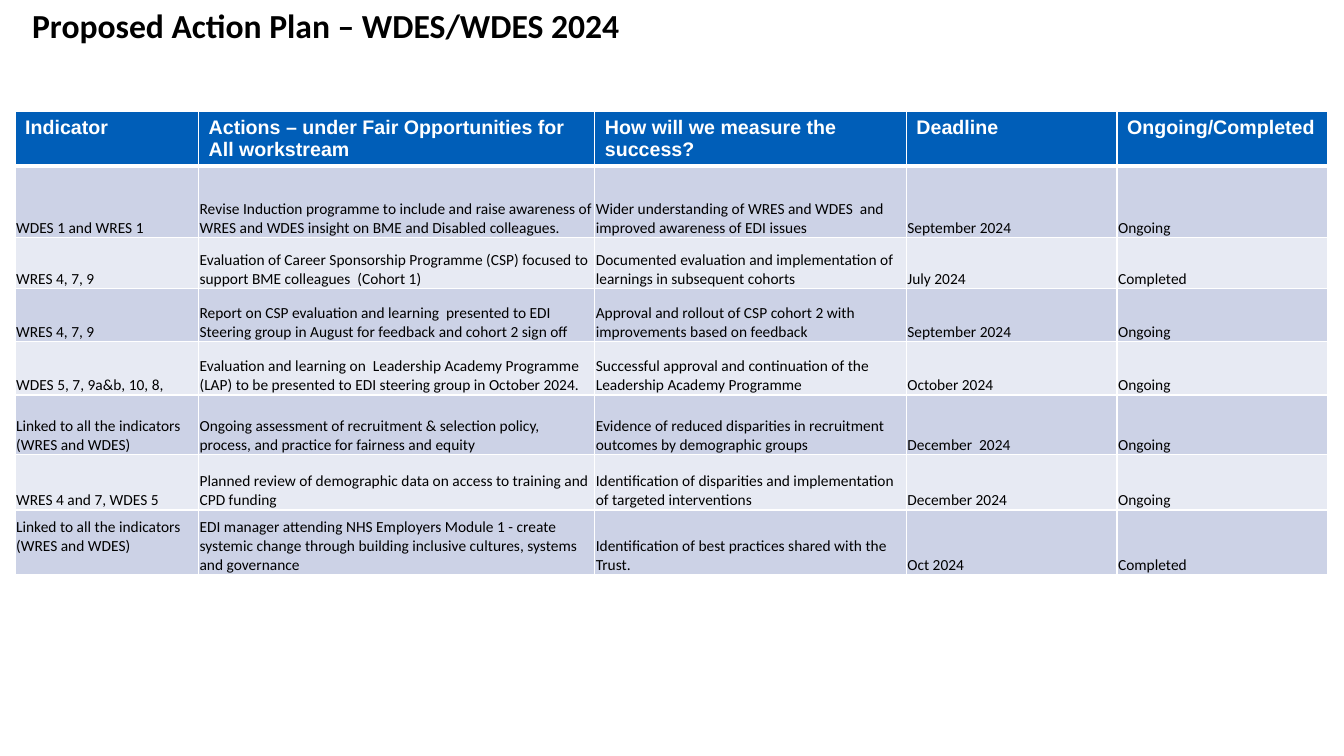
from pptx import Presentation
from pptx import util as u
from pptx.dml.color import RGBColor
from pptx.enum import text
from pptx.oxml.ns import qn
from lxml import etree

COLORS = {"white": "FFFFFF", "black": "000000", "header": "005EB8",
          "odd": "CCD2E6", "even": "E7EAF3"}
COLUMN_WIDTHS = [1.82, 3.93, 3.09, 2.09, 2.09]
ROW_HEIGHTS = [0.54, 0.71, 0.5, 0.53, 0.53, 0.59, 0.55, 0.64]
ACTIONS = [
    ["Indicator", "Actions – under Fair Opportunities for All workstream",
     "How will we measure the success?", "Deadline", "Ongoing/Completed"],
    ["WDES 1 and WRES 1",
     "Revise Induction programme to include and raise awareness of WRES and WDES insight on BME and Disabled colleagues.",
     "Wider understanding of WRES and WDES  and improved awareness of EDI issues",
     "September 2024", "Ongoing"],
    ["WRES 4, 7, 9",
     "Evaluation of Career Sponsorship Programme (CSP) focused to support BME colleagues  (Cohort 1)",
     "Documented evaluation and implementation of learnings in subsequent cohorts",
     "July 2024", "Completed"],
    ["WRES 4, 7, 9",
     "Report on CSP evaluation and learning  presented to EDI Steering group in August for feedback and cohort 2 sign off",
     "Approval and rollout of CSP cohort 2 with improvements based on feedback",
     "September 2024", "Ongoing"],
    ["WDES 5, 7, 9a&b, 10, 8,",
     "Evaluation and learning on  Leadership Academy Programme (LAP) to be presented to EDI steering group in October 2024.",
     "Successful approval and continuation of the Leadership Academy Programme",
     "October 2024", "Ongoing"],
    ["Linked to all the indicators (WRES and WDES)",
     "Ongoing assessment of recruitment & selection policy, process, and practice for fairness and equity",
     "Evidence of reduced disparities in recruitment outcomes by demographic groups",
     "December  2024", "Ongoing"],
    ["WRES 4 and 7, WDES 5",
     "Planned review of demographic data on access to training and CPD funding",
     "Identification of disparities and implementation of targeted interventions",
     "December 2024", "Ongoing"],
    ["Linked to all the indicators (WRES and WDES)",
     "EDI manager attending NHS Employers Module 1 - create systemic change through building inclusive cultures, systems and governance",
     "Identification of best practices shared with the Trust.",
     "Oct 2024", "Completed"],
]


class ActionPlanSlide:
    def __init__(self, prs):
        self.s = prs.slides.add_slide(prs.slide_layouts[6])

    def color(self, name):
        return RGBColor.from_string(COLORS[name])

    def words(self, tf, content, font, size, color, bold):
        p = tf.paragraphs[0]
        p.text = content
        for r in p.runs:
            r.font.name = font
            r.font.size = u.Pt(size)
            r.font.bold = bold
            r.font.color.rgb = self.color(color)

    def title(self, content, left, top, width, height):
        sp = self.s.shapes.add_textbox(*map(u.Inches, (left, top, width, height)))
        tf = sp.text_frame
        tf.word_wrap = True
        tf.auto_size = text.MSO_AUTO_SIZE.SHAPE_TO_FIT_TEXT
        self.words(tf, content, "Calibri", 24, "black", True)

    def borders(self, cell, top, bottom):
        tc_pr = cell._tc.get_or_add_tcPr()
        for side, width in (("lnL", 1), ("lnR", 1), ("lnT", top), ("lnB", bottom)):
            ln = etree.SubElement(tc_pr, qn(f"a:{side}"), w=str(u.Pt(width)))
            fill = etree.SubElement(ln, qn("a:solidFill"))
            etree.SubElement(fill, qn("a:srgbClr"), val=COLORS["white"])

    def cell(self, cell, content, row):
        header = row == 0
        self.borders(cell, 3 if row == 1 else 1, 3 if header else 1)
        cell.fill.solid()
        band = "header" if header else "odd" if row % 2 else "even"
        cell.fill.fore_color.rgb = self.color(band)
        if header:
            self.words(cell.text_frame, content, "Arial", 14, "white", True)
            return
        cell.vertical_anchor = text.MSO_ANCHOR.BOTTOM
        cell.margin_left = cell.margin_right = cell.margin_top = u.Inches(0.01)
        cell.margin_bottom = 0
        self.words(cell.text_frame, content, "Calibri", 11, "black", False)

    def table(self, rows, widths, heights, left, top):
        box = map(u.Inches, (left, top, sum(widths), sum(heights)))
        table = self.s.shapes.add_table(len(rows), len(widths), *box).table
        for column, width in zip(table.columns, widths):
            column.width = u.Inches(width)
        for i, (row, height) in enumerate(zip(rows, heights)):
            table.rows[i].height = u.Inches(height)
            for j, content in enumerate(row):
                self.cell(table.cell(i, j), content, i)
        return table


def main():
    prs = Presentation()
    prs.slide_width, prs.slide_height = u.Inches(13.33), u.Inches(7.5)
    plan = ActionPlanSlide(prs)
    table = plan.table(ACTIONS, COLUMN_WIDTHS, ROW_HEIGHTS, 0.15, 1.11)
    table.cell(len(ACTIONS) - 1, 0).margin_bottom = u.Inches(0.19)
    plan.title("Proposed Action Plan – WDES/WDES 2024", 0.22, 0, 7.98, 0.5)
    prs.save("out.pptx")


if __name__ == "__main__":
    main()
